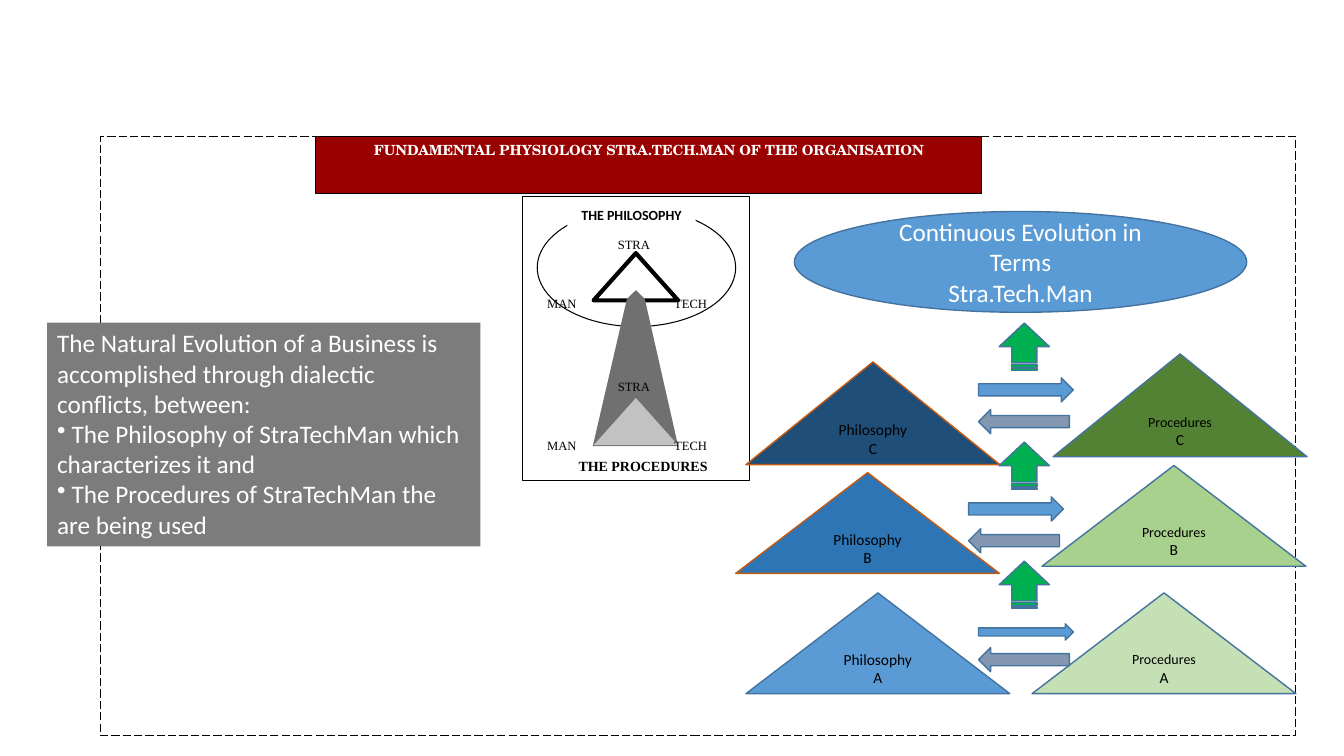
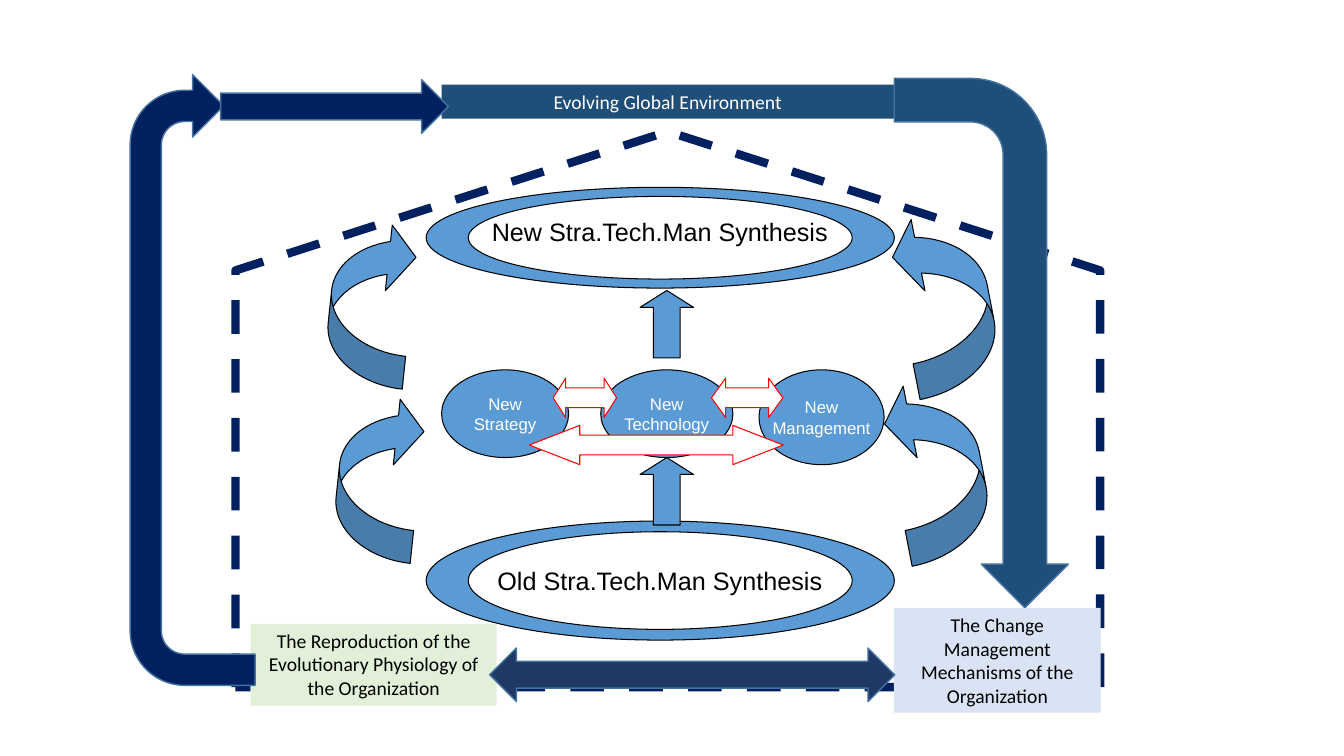
import lxml.etree
import pptx
import pptx.dml.color
import pptx.enum.dml
import pptx.enum.shapes
import pptx.enum.text
import pptx.oxml.ns
import pptx.util

Cm = pptx.util.Cm
Pt = pptx.util.Pt
SHAPE = pptx.enum.shapes.MSO_SHAPE
DASH = pptx.enum.dml.MSO_LINE
ALIGN = pptx.enum.text.PP_ALIGN
ANCHOR = pptx.enum.text.MSO_ANCHOR

BLACK, WHITE, RED, NAVY = "000000", "FFFFFF", "FF0000", "002060"
BLUE, DEEP_BLUE, EDGE, RUST = "5B9BD5", "1F4E79", "43739E", "C55A11"
GREEN, SLATE = "00B050", "8497B0"
SERIF = "Times New Roman"
TITLE_LAYOUT = 5

BANNER = "FUNDAMENTAL PHYSIOLOGY STRA.TECH.MAN OF THE ORGANISATION"
NOTES = [
    "The Natural Evolution of a Business is accomplished through dialectic conflicts, between:",
    " The Philosophy of StraTechMan which characterizes it and",
    " The Procedures of StraTechMan the are being used",
]
CONE = [(16.03, 7.31), (16.25, 7.53), (17.09, 11.24), (14.94, 11.24), (15.8, 7.53)]
CORE_LABEL_TOPS = [5.84, 9.42]
CORE_LABELS = [("STRA", 15.32, 0), ("TECH", 16.74, 1.5), ("MAN", 13.54, 1.5)]

STAGES = [
    dict(letter="C", size=(6.4, 2.59), philosophy=(18.8, 9.12, DEEP_BLUE, RUST),
         procedures=(26.54, 8.92, "548235"), arrow_left=24.66, arrow_height=0.61),
    dict(letter="Β", size=(6.65, 2.54), philosophy=(18.54, 11.91, "2E75B6", RUST),
         procedures=(26.26, 11.73, "A9D18E"), arrow_left=24.41, arrow_height=0.61),
    dict(letter="Α", size=(6.65, 2.54), philosophy=(18.8, 14.94, BLUE, EDGE),
         procedures=(26.01, 14.94, "C5E0B4"), arrow_left=24.66, arrow_height=0.41),
]
STAGE_TOP, STAGE_STEP = 8.1, 3.0

RINGS = [
    ("Old Stra.Tech.Man Synthesis", 13.13, 3.0, 14.12),
    ("New Stra.Tech.Man Synthesis", 4.72, 2.54, 5.33),
]
RING_LEFT, RING_WIDTH, RING_HOLE = 10.74, 11.8, 0.82
CURVED_ARROWS = [
    (SHAPE.CURVED_RIGHT_ARROW, 169, (0.416, 0.831, 0.291), (2.21, 4.57),
     [(22.53, 9.53), (22.73, 5.33)]),
    (SHAPE.CURVED_LEFT_ARROW, 186, (0.41, 0.819, 0.336), (2.03, 4.17),
     [(8.53, 9.93), (8.33, 5.54)]),
]
UP_ARROW_TOPS = [11.53, 7.32]
FACTORS = [
    ("Strategy", 11.13, 3.2, 2.21),
    ("Technology", 15.14, 3.33, 2.21),
    ("Management", 19.13, 3.15, 2.39),
]
EXCHANGES = [
    (13.94, 9.53, 1.6, 0.32),
    (17.93, 9.53, 1.8, 0.361),
    (13.34, 10.72, 6.4, 1.284),
]
FLOWS = [
    (SHAPE.BENT_ARROW, (18.06, 6.45, 13.34, 4.39), DEEP_BLUE, 90),
    (SHAPE.LEFT_RIGHT_ARROW, (12.34, 16.33, 10.21, 1.35), "203864", 0),
    (SHAPE.U_TURN_ARROW, (-2.84, 8, 15.39, 3.15), NAVY, 270),
    (SHAPE.RIGHT_ARROW, (5.56, 2.01, 5.74, 1.35), NAVY, 0),
]
OUTCOMES = [
    ("The Reproduction of the Evolutionary Physiology of the Organization",
     (6.32, 15.72, 6.2, 2.06), "E2F0D9"),
    ("The Change Management Mechanisms of the Organization",
     (22.53, 15.32, 5.21, 2.64), "DAE3F3"),
]


def color(value):
    return pptx.dml.color.RGBColor.from_string(value)


def paint(sp, fill=None, line=None, width=1, dash=None):
    sp.shadow.inherit = False
    if fill:
        sp.fill.solid()
        sp.fill.fore_color.rgb = color(fill)
    else:
        sp.fill.background()
    if line:
        sp.line.color.rgb = color(line)
        sp.line.width = Pt(width)
        if dash:
            sp.line.dash_style = dash
    else:
        sp.line.fill.background()
    return sp


def add(s, kind, box, rot=0, adj=(), **style):
    sp = s.shapes.add_shape(kind, *map(Cm, box))
    sp.rotation = rot
    for i, value in enumerate(adj):
        sp.adjustments[i] = value
    return paint(sp, **style)


def write(sp, lines, sizes=(11,), font="Calibri", ink=BLACK, bold=False,
          align=ALIGN.CENTER, anchor=ANCHOR.TOP, wrap=True, bullets_from=None):
    tf = sp.text_frame
    tf.word_wrap = wrap
    tf.auto_size = pptx.enum.text.MSO_AUTO_SIZE.NONE
    tf.vertical_anchor = anchor
    for i, line in enumerate(lines):
        p = tf.add_paragraph() if i else tf.paragraphs[0]
        p.alignment = align
        r = p.add_run()
        r.text = line
        r.font.size = Pt(sizes[min(i, len(sizes) - 1)])
        r.font.name = font
        r.font.bold = bold
        r.font.color.rgb = color(ink)
        if bullets_from is not None and i >= bullets_from:
            pPr = p._p.get_or_add_pPr()
            pPr.set("marL", "0")
            pPr.set("indent", "0")
            lxml.etree.SubElement(pPr, pptx.oxml.ns.qn("a:buChar")).set("char", "•")


def label(s, box, text, **style):
    write(s.shapes.add_textbox(*map(Cm, box)), [text], **style)


def titled_slide(prs, text, box, fill, line=None, **style):
    s = prs.slides.add_slide(prs.slide_layouts[TITLE_LAYOUT])
    sp = s.shapes.title
    sp.left, sp.top, sp.width, sp.height = map(Cm, box)
    paint(sp, fill, line, 0.75)
    write(sp, [text], ink=WHITE, **style)
    return s


def add_core(s):
    add(s, SHAPE.OVAL, (13.54, 5.26, 5, 2.97), fill=WHITE, line=BLACK, width=0.75)
    add(s, SHAPE.ISOSCELES_TRIANGLE, (14.96, 6.38, 2.13, 1.19),
        fill=WHITE, line=BLACK, width=3)
    points = [(Cm(x), Cm(y)) for x, y in CONE]
    builder = s.shapes.build_freeform(*points[0])
    builder.add_line_segments(points[1:], close=True)
    paint(builder.convert_to_shape(), "707070")
    add(s, SHAPE.ISOSCELES_TRIANGLE, (14.96, 10.03, 2.13, 1.19), fill="C2C2C2")
    for top in CORE_LABEL_TOPS:
        for text, left, drop in CORE_LABELS:
            label(s, (left, top + drop, 2.13, 0.6), text, sizes=(9,), font=SERIF,
                  align=ALIGN.LEFT)
    label(s, (13.79, 11.4, 4.83, 1.4), "THE PROCEDURES", sizes=(10,), font=SERIF, bold=True)
    add(s, SHAPE.RECTANGLE, (13.18, 4.95, 5.72, 7.16), line=BLACK, width=0.75)
    sp = add(s, SHAPE.RECTANGLE, (14.3, 5.08, 3.23, 0.69), fill=WHITE)
    write(sp, ["THE PHILOSOPHY"], sizes=(10,), bold=True)


def add_stages(s):
    for stage in STAGES:
        left, top, fill, line = stage["philosophy"]
        sp = add(s, SHAPE.ISOSCELES_TRIANGLE, (left, top, *stage["size"]), fill=fill, line=line)
        write(sp, ["Philosophy", stage["letter"]], anchor=ANCHOR.MIDDLE)
        left, top, fill = stage["procedures"]
        sp = add(s, SHAPE.ISOSCELES_TRIANGLE, (left, top, *stage["size"]), fill=fill, line=EDGE)
        write(sp, ["Procedures", stage["letter"]], sizes=(10, 11), anchor=ANCHOR.MIDDLE)
    for i, stage in enumerate(STAGES):
        top = STAGE_TOP + i * STAGE_STEP
        left, height = stage["arrow_left"], stage["arrow_height"]
        add(s, SHAPE.RIGHT_ARROW, (left, top + 2.03 - height, 2.39, height),
            fill=BLUE, line=EDGE)
        add(s, SHAPE.LEFT_ARROW, (left, top + 2.22, 2.29, 0.61), fill=SLATE, line=EDGE)
        add(s, SHAPE.STRIPED_RIGHT_ARROW, (25.22, top, 1.19, 1.27), rot=270,
            fill=GREEN, line=EDGE)


def physiology_slide(prs):
    s = titled_slide(prs, BANNER, (7.95, 3.45, 16.79, 1.42), "990000", BLACK,
                     sizes=(10,), font="TeX Gyre Schola", bold=True)
    add(s, SHAPE.RECTANGLE, (2.54, 3.45, 30.12, 15.09),
        line=BLACK, width=0.75, dash=DASH.LONG_DASH)
    add_core(s)
    add_stages(s)
    sp = add(s, SHAPE.RECTANGLE, (1.19, 8.13, 10.92, 5.64), fill="7C7C7C")
    write(sp, NOTES, sizes=(18,), ink=WHITE, align=ALIGN.LEFT, bullets_from=1)
    sp = add(s, SHAPE.OVAL, (20.02, 5.33, 11.4, 2.54), fill=BLUE, line=EDGE)
    write(sp, ["Continuous Evolution in Terms", "Stra.Tech.Man"], sizes=(18,), ink=WHITE,
          anchor=ANCHOR.MIDDLE)


def environment_slide(prs):
    s = titled_slide(prs, "Evolving Global Environment", (11.13, 2.13, 11.4, 0.86),
                     DEEP_BLUE, sizes=(14,))
    thin = dict(fill=BLUE, line=BLACK, width=0.75)
    margin = (1 - RING_HOLE) / 2
    for text, top, height, text_top in RINGS:
        add(s, SHAPE.OVAL, (RING_LEFT, top, RING_WIDTH, height), **thin)
        hole = (RING_LEFT + RING_WIDTH * margin, top + height * margin,
                RING_WIDTH * RING_HOLE, height * RING_HOLE)
        add(s, SHAPE.OVAL, hole, fill=WHITE, line=BLACK, width=0.75)
        label(s, (11.73, text_top, 9.8, 1.02), text, sizes=(18,), font="Arial")
    for kind, rot, adj, size, places in CURVED_ARROWS:
        for place in places:
            add(s, kind, (*place, *size), rot, adj, **thin)
    for top in UP_ARROW_TOPS:
        add(s, SHAPE.UP_ARROW, (16.13, top, 1.35, 1.7), adj=(0.5, 0.317), **thin)
    for name, left, width, height in FACTORS:
        sp = add(s, SHAPE.OVAL, (left, 9.32, width, height), **thin)
        write(sp, ["New", name], sizes=(12,), font="Arial", ink=WHITE,
              anchor=ANCHOR.MIDDLE, wrap=False)
    for left, top, width, head in EXCHANGES:
        add(s, SHAPE.LEFT_RIGHT_ARROW, (left, top, width, 0.99), adj=(0.5, head),
            fill=WHITE, line=RED, width=0.75)
    add(s, SHAPE.PENTAGON, (9.83, -0.58, 14, 21.79), rot=270, adj=(0.25,),
        line=NAVY, width=6, dash=DASH.DASH)
    for text, box, fill in OUTCOMES:
        write(add(s, SHAPE.RECTANGLE, box, fill=fill), [text], sizes=(14,))
    for kind, box, fill, rot in FLOWS:
        add(s, kind, box, rot, fill=fill, line=EDGE)


def main():
    prs = pptx.Presentation()
    prs.slide_width, prs.slide_height = Cm(33.87), Cm(19.05)
    physiology_slide(prs)
    environment_slide(prs)
    prs.save("out.pptx")


if __name__ == "__main__":
    main()
